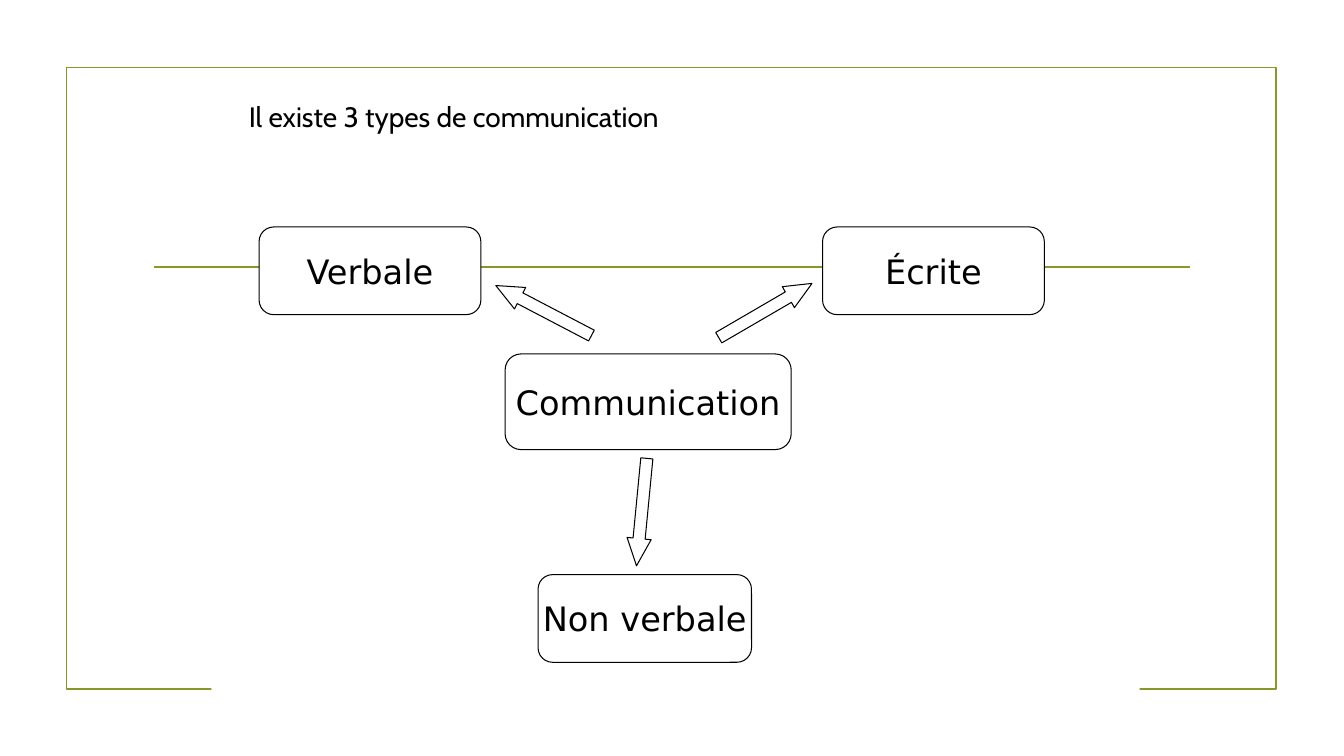
"""Build a slide showing the three types of communication."""
from pptx import Presentation
from pptx.dml.color import RGBColor
from pptx.enum.shapes import MSO_CONNECTOR as Connector, MSO_SHAPE as Preset
from pptx.enum.text import MSO_ANCHOR as Anchor, MSO_AUTO_SIZE as AutoSize, PP_ALIGN as Align
from pptx.oxml.ns import qn
from pptx.util import Cm, Pt

COLORS = {"olive": "83992A", "white": "FFFFFF", "black": "000000"}
LABEL_FORMAT = {"name": "DejaVu Sans", "size": Pt(24)}
TITLE_FORMAT = {"name": "Cabin", "size": Pt(20)}


def add_figure(preset, place, fill=None, line=None, width=0.75):
    figure = page.shapes.add_shape(preset, *map(Cm, place))
    figure.shadow.inherit = False
    if fill:
        figure.fill.solid()
        figure.fill.fore_color.rgb = RGBColor.from_string(COLORS[fill])
    else:
        figure.fill.background()
    if line:
        figure.line.color.rgb = RGBColor.from_string(COLORS[line])
        figure.line.width = Pt(width)
    else:
        figure.line.fill.background()
    return figure


def write_text(box, text, formats):
    para = box.text_frame.paragraphs[0]
    span = para.add_run()
    span.text = text
    for name, value in formats.items():
        setattr(span.font, name, value)
    span.font.color.rgb = RGBColor.from_string(COLORS["black"])
    return para


deck = Presentation()
deck.slide_width, deck.slide_height = Cm(33.87), Cm(19.05)
page = deck.slides.add_slide(deck.slide_layouts[6])

add_figure(Preset.RECTANGLE, (1.68, 1.7, 30.48, 15.67), line="olive", width=1.25)
rule = page.shapes.add_connector(Connector.STRAIGHT, Cm(3.89), Cm(6.73), Cm(30), Cm(6.73))
rule.line.color.rgb = RGBColor.from_string(COLORS["olive"])
rule.line.width = Pt(1.25)
rule_properties = rule._element.spPr
rule_properties.append(rule_properties.makeelement(qn("a:effectLst"), {}))

add_figure(Preset.RECTANGLE, (5.33, 16.54, 23.39, 1.6), fill="white")

for label, place in [
    ("Verbale", (6.53, 5.72, 5.59, 2.21)),
    ("Écrite", (20.73, 5.72, 5.59, 2.21)),
    ("Communication", (12.73, 8.92, 7.21, 2.41)),
    ("Non verbale", (13.56, 14.48, 5.38, 2.21)),
]:
    box = add_figure(Preset.ROUNDED_RECTANGLE, place, fill="white", line="black")
    box.text_frame.word_wrap = False
    box.text_frame.vertical_anchor = Anchor.MIDDLE
    write_text(box, label, LABEL_FORMAT).alignment = Align.CENTER

for left, top, angle in [(17.93, 7.52, 329.8), (12.34, 7.52, 207.6), (14.81, 12.6, 95.5)]:
    arrow = add_figure(Preset.RIGHT_ARROW, (left, top, 2.72, 0.61), fill="white", line="black")
    arrow.adjustments[1] = 1.13
    arrow.rotation = angle

title = page.shapes.add_textbox(Cm(6.02), Cm(2.39), Cm(15.29), Cm(1.12))
title.text_frame.word_wrap = True
title.text_frame.auto_size = AutoSize.SHAPE_TO_FIT_TEXT
write_text(title, "Il existe 3 types de communication", TITLE_FORMAT)

deck.save("out.pptx")
